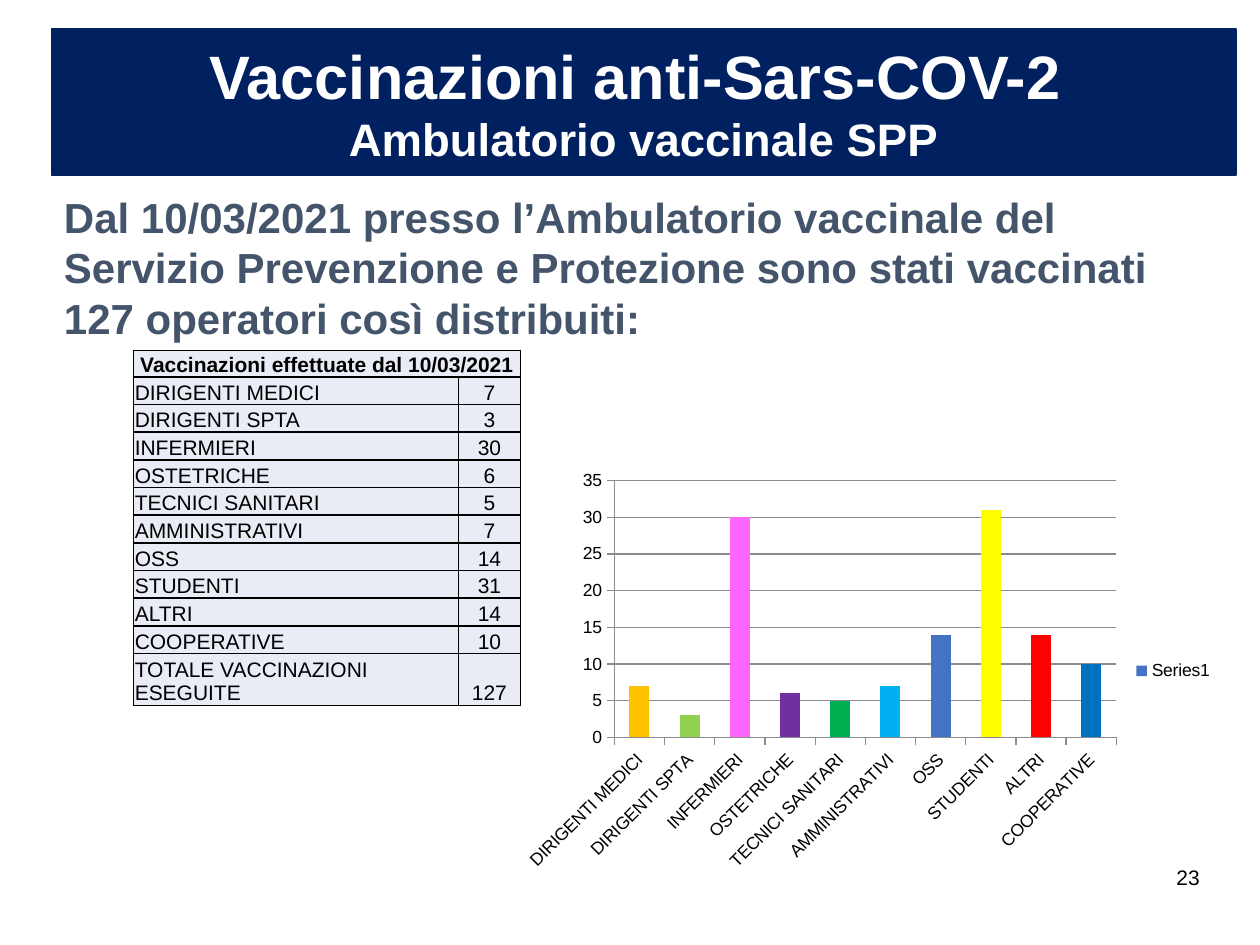
from dataclasses import dataclass
from typing import NamedTuple

from lxml.etree import SubElement
from pptx import Presentation
from pptx.chart.data import CategoryChartData
from pptx.dml.color import RGBColor
from pptx.enum.chart import XL_CHART_TYPE as ChartType, XL_LEGEND_POSITION as Legend
from pptx.enum.chart import XL_TICK_MARK as Tick
from pptx.enum.shapes import MSO_SHAPE as Shape
from pptx.enum.text import MSO_ANCHOR as Anchor, PP_ALIGN as Align
from pptx.oxml.ns import qn
from pptx.util import Inches, Pt


@dataclass(frozen=True)
class Theme:
    font: str = "Arial"
    navy: str = "002060"
    slate: str = "44546A"
    white: str = "FFFFFF"
    black: str = "000000"
    cell: str = "E9EBF5"
    grid: str = "8B8B8B"
    bar: str = "4472C4"
    title: int = 35
    subtitle: int = 26
    body: int = 24
    small: int = 12
    chart: int = 10


class Box(NamedTuple):
    """Left, top, width and height as shares of the slide."""
    x: float
    y: float
    w: float
    h: float

    def lengths(self) -> tuple:
        return (Inches(self.x * WIDTH), Inches(self.y * HEIGHT),
                Inches(self.w * WIDTH), Inches(self.h * HEIGHT))


class Group(NamedTuple):
    name: str
    count: int
    color: str = ""


T = Theme()
WIDTH, HEIGHT = 10, 7.5
BANNER = Box(0.041, 0.23 / HEIGHT, 0.94, 1.16 / HEIGHT)
INTRO = Box(0.041, 1.47 / HEIGHT, 0.94, 1.31 / HEIGHT)
NUMBER = Box(0.737, 6.76 / HEIGHT, 0.225, 0.4 / HEIGHT)
TABLE = Box(0.106, 2.78 / HEIGHT, 0.307, 2.85 / HEIGHT)
CHART = Box(0.406, 3.67 / HEIGHT, 0.567, 3.31 / HEIGHT)
COLUMNS = (2.58, 0.49)
HEAD_ROW, ROW, TOTAL_ROW = 0.2, 0.22, 0.39

GROUPS = [
    Group("DIRIGENTI MEDICI", 7, "FFC000"),
    Group("DIRIGENTI SPTA", 3, "92D050"),
    Group("INFERMIERI", 30, "FF66FF"),
    Group("OSTETRICHE", 6, "7030A0"),
    Group("TECNICI SANITARI", 5, "00B050"),
    Group("AMMINISTRATIVI", 7, "00B0F0"),
    Group("OSS", 14),
    Group("STUDENTI", 31, "FFFF00"),
    Group("ALTRI", 14, "FF0000"),
    Group("COOPERATIVE", 10, "0070C0"),
]


def rgb(color: str) -> RGBColor:
    return RGBColor.from_string(color)


def add_run(p, text: str, size: int, color: str, bold: bool = False,
            align=Align.LEFT) -> None:
    p.alignment = align
    r = p.add_run()
    r.text = text
    r.font.name, r.font.size, r.font.bold = T.font, Pt(size), bold
    r.font.color.rgb = rgb(color)


def add_banner(s) -> None:
    sp = s.shapes.add_shape(Shape.RECTANGLE, *BANNER.lengths())
    sp.shadow.inherit = False
    sp.fill.solid()
    sp.fill.fore_color.rgb = rgb(T.navy)
    sp.line.color.rgb = rgb(T.navy)
    sp.line.width = Pt(1)
    tf = sp.text_frame
    tf.vertical_anchor = Anchor.MIDDLE
    add_run(tf.paragraphs[0], "Vaccinazioni anti-Sars-COV-2 ", T.title, T.white,
            True, Align.CENTER)
    add_run(tf.add_paragraph(), "Ambulatorio vaccinale SPP", T.subtitle, T.white,
            True, Align.CENTER)


def add_text(s, box: Box, text: str, size: int, color: str, bold: bool = False,
             align=Align.LEFT, anchor=Anchor.TOP) -> None:
    tf = s.shapes.add_textbox(*box.lengths()).text_frame
    tf.word_wrap = True
    tf.vertical_anchor = anchor
    add_run(tf.paragraphs[0], text, size, color, bold, align)


def style_cell(cell) -> None:
    """Give a cell its margins, black borders and fill."""
    cell.vertical_anchor = Anchor.BOTTOM
    cell.margin_left = cell.margin_top = cell.margin_right = Inches(0.01)
    cell.margin_bottom = 0
    tc_pr = cell._tc.get_or_add_tcPr()
    for side in ("a:lnL", "a:lnR", "a:lnT", "a:lnB"):
        ln = SubElement(tc_pr, qn(side), w=str(Pt(1)))
        SubElement(SubElement(ln, qn("a:solidFill")), qn("a:srgbClr"), val=T.black)
    cell.fill.solid()
    cell.fill.fore_color.rgb = rgb(T.cell)


def add_counts_table(s) -> None:
    rows = GROUPS + [Group("TOTALE VACCINAZIONI ESEGUITE", sum(g.count for g in GROUPS))]
    table = s.shapes.add_table(len(rows) + 1, len(COLUMNS), *TABLE.lengths()).table
    for column, width in zip(table.columns, COLUMNS):
        column.width = Inches(width)
    heights = [HEAD_ROW] + [ROW] * len(GROUPS) + [TOTAL_ROW]
    for row, height in zip(table.rows, heights):
        row.height = Inches(height)
    for cell in table.iter_cells():
        style_cell(cell)
    head = table.cell(0, 0)
    head.merge(table.cell(0, 1))
    add_run(head.text_frame.paragraphs[0], "Vaccinazioni effettuate dal 10/03/2021",
            T.small, T.black, True, Align.CENTER)
    for i, group in enumerate(rows, 1):
        for j, (text, align) in enumerate([(group.name, Align.LEFT),
                                           (str(group.count), Align.CENTER)]):
            add_run(table.cell(i, j).text_frame.paragraphs[0], text, T.small,
                    T.black, align=align)


def add_counts_chart(s) -> None:
    data = CategoryChartData()
    data.categories = [g.name for g in GROUPS]
    data.add_series("Series1", [g.count for g in GROUPS])
    chart = s.shapes.add_chart(ChartType.COLUMN_CLUSTERED, *CHART.lengths(), data).chart
    chart.font.name, chart.font.size = T.font, Pt(T.chart)
    chart.font.color.rgb = rgb(T.black)
    chart.has_title = False
    chart.has_legend = True
    chart.legend.position = Legend.RIGHT
    chart.legend.include_in_layout = False

    values, names = chart.value_axis, chart.category_axis
    values.minimum_scale, values.maximum_scale, values.major_unit = 0, 35, 5
    values.has_major_gridlines = True
    for axis in (values, names):
        axis.major_tick_mark = Tick.OUTSIDE
        axis.tick_labels.font.size = Pt(T.chart)
    for line in (values.major_gridlines.format.line, values.format.line,
                 names.format.line):
        line.color.rgb = rgb(T.grid)
        line.width = Pt(0.75)
    names._element.find(qn("c:txPr")).find(qn("a:bodyPr")).set("rot", "-2700000")

    plot = chart.plots[0]
    plot.gap_width = 150
    plot.vary_by_categories = False
    series = plot.series[0]
    series.format.fill.solid()
    series.format.fill.fore_color.rgb = rgb(T.bar)
    for i, group in enumerate(GROUPS):
        if group.color:
            fill = series.points[i].format.fill
            fill.solid()
            fill.fore_color.rgb = rgb(group.color)


def main() -> None:
    prs = Presentation()
    prs.slide_width, prs.slide_height = Inches(WIDTH), Inches(HEIGHT)
    s = prs.slides.add_slide(prs.slide_layouts[6])
    add_text(s, INTRO, "Dal 10/03/2021 presso l’Ambulatorio vaccinale del Servizio "
             "Prevenzione e Protezione sono stati vaccinati 127 operatori così "
             "distribuiti:", T.body, T.slate, True)
    add_banner(s)
    add_text(s, NUMBER, "23", T.small, T.black, align=Align.RIGHT, anchor=Anchor.MIDDLE)
    add_counts_table(s)
    add_counts_chart(s)
    prs.save("out.pptx")


if __name__ == "__main__":
    main()
